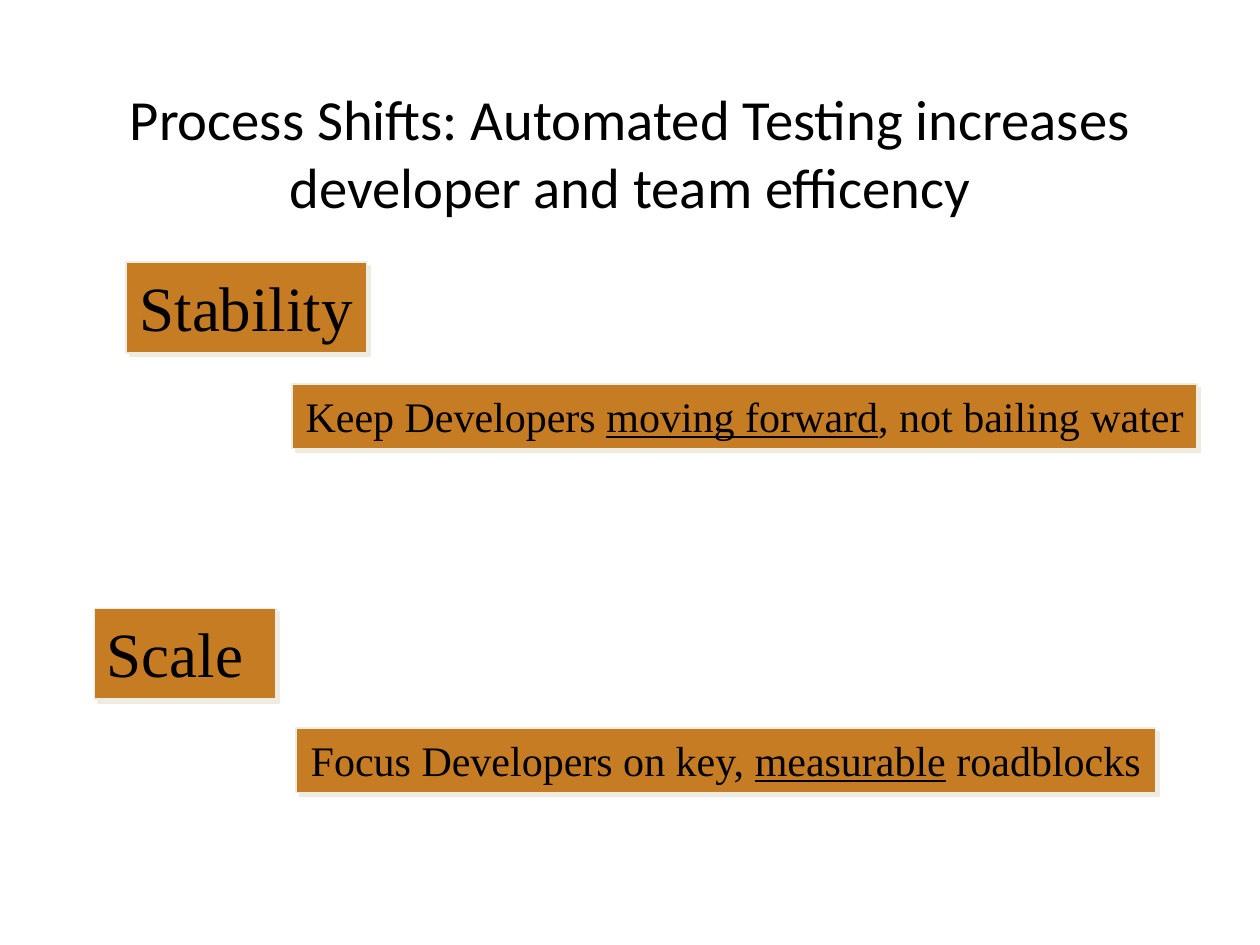
from lxml.etree import SubElement
from pptx import Presentation
from pptx.dml.color import RGBColor
from pptx.enum.shapes import MSO_SHAPE
from pptx.enum.text import MSO_ANCHOR, MSO_AUTO_SIZE, PP_ALIGN
from pptx.oxml.ns import qn
from pptx.util import Inches, Pt

BLACK, ORANGE, CREAM = "000000", "C57C23", "EEECE1"


def rgb(value):
    """Return the colour for a hex string."""
    return RGBColor.from_string(value)


def add_run(p, text, size, font="Times New Roman", color=BLACK, underline=None):
    """Add a formatted run to a paragraph."""
    r = p.add_run()
    r.text = text
    r.font.size = Pt(size)
    r.font.name = font
    r.font.color.rgb = rgb(color)
    r.font.underline = underline


def add_shadow(sp, color, distance=2.8, angle=45):
    """Give a shape a solid offset shadow."""
    sp.shadow.inherit = False
    effects = sp._element.spPr.find(qn("a:effectLst"))
    shadow = SubElement(effects, qn("a:outerShdw"), dist=str(Pt(distance)),
                        dir=str(angle * 60000), algn="ctr", rotWithShape="0")
    SubElement(shadow, qn("a:srgbClr"), val=color)


def add_title(s, text):
    """Place and fill the title placeholder."""
    sp = s.shapes.title
    sp.left, sp.top, sp.width, sp.height = map(Inches, (0.5, 0.58, 9, 1.25))
    tf = sp.text_frame
    tf.word_wrap = True
    tf.auto_size = MSO_AUTO_SIZE.NONE
    tf.vertical_anchor = MSO_ANCHOR.MIDDLE
    p = tf.paragraphs[0]
    p.alignment = PP_ALIGN.CENTER
    add_run(p, text, 32.4, font="Calibri")


def add_label(s, box, parts, size, align=PP_ALIGN.CENTER, wrap=False):
    """Add an orange label whose every second part is underlined."""
    sp = s.shapes.add_shape(MSO_SHAPE.RECTANGLE, *map(Inches, box))
    sp.fill.solid()
    sp.fill.fore_color.rgb = rgb(ORANGE)
    sp.line.color.rgb = rgb(CREAM)
    sp.line.width = Pt(1)
    add_shadow(sp, CREAM)
    tf = sp.text_frame
    tf.word_wrap = wrap
    tf.auto_size = MSO_AUTO_SIZE.SHAPE_TO_FIT_TEXT
    tf.vertical_anchor = MSO_ANCHOR.TOP
    p = tf.paragraphs[0]
    p.alignment = align
    for i, text in enumerate(parts):
        add_run(p, text, size, underline=i % 2 == 1)


def main():
    """Build the slide and save it."""
    prs = Presentation()
    prs.slide_width, prs.slide_height = Inches(10), Inches(7.5)
    s = prs.slides.add_slide(prs.slide_layouts[5])
    add_title(s, "Process Shifts: Automated Testing increases "
                 "developer and team efficency")
    add_label(s, (0.75, 4.83, 1.44, 0.72), ["Scale"], 36,
              align=PP_ALIGN.LEFT, wrap=True)
    add_label(s, (2.32, 3.05, 7.18, 0.51),
              ["Keep Developers ", "moving forward", ", not bailing water"], 24)
    add_label(s, (1, 2.08, 1.91, 0.72), ["Stability"], 36)
    add_label(s, (2.35, 5.78, 6.82, 0.51),
              ["Focus Developers on key, ", "measurable", " roadblocks"], 24)
    prs.save("out.pptx")


if __name__ == "__main__":
    main()
